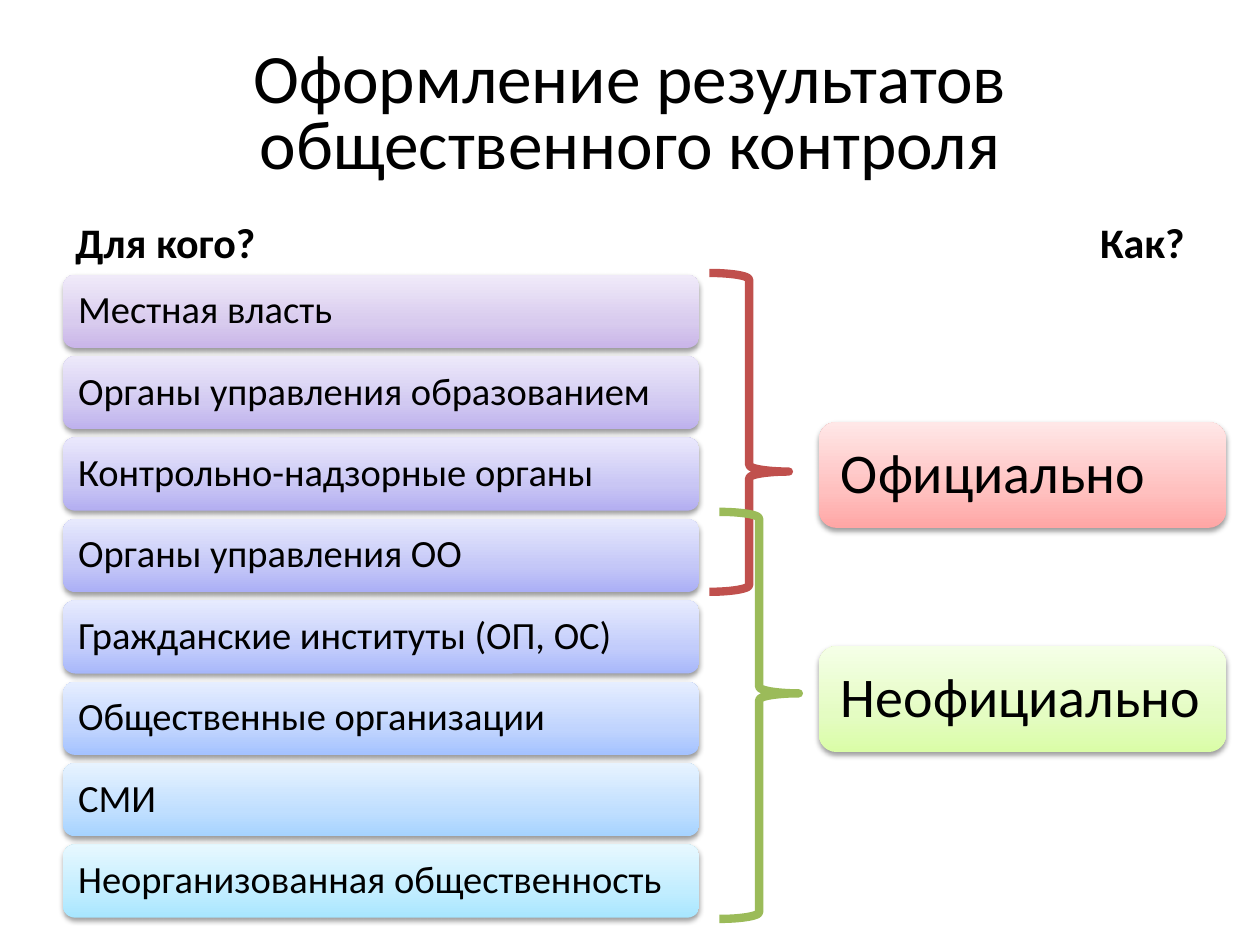
from copy import deepcopy

from lxml.etree import SubElement
from pptx import Presentation
from pptx.dml.color import RGBColor
from pptx.enum.shapes import MSO_SHAPE
from pptx.enum.text import MSO_ANCHOR, MSO_AUTO_SIZE, PP_ALIGN
from pptx.oxml.ns import qn
from pptx.util import Pt

FONT = "Calibri"
BLACK = RGBColor(0x00, 0x00, 0x00)
RED = RGBColor(0xC0, 0x50, 0x4D)
GREEN = RGBColor(0x9B, 0xBB, 0x59)

STOP_POSITIONS = (0, 0.35, 1)

# Label and gradient colours, from the bottom of the bar to its top
AUDIENCES = [
    ("Местная власть", ("C9B5E8", "D8CBEE", "F0EAF9")),
    ("Органы управления образованием", ("BEB1ED", "D1C9F1", "EDE9FA")),
    ("Контрольно-надзорные органы", ("B3AEF1", "C9C6F4", "EAE8FC")),
    ("Органы управления ОО", ("ABAFF6", "C4C7F7", "E7E9FD")),
    ("Гражданские институты (ОП, ОС)", ("A7B7FA", "C2CCFB", "E7EBFE")),
    ("Общественные организации", ("A4C2FF", "C0D4FE", "E6EEFF")),
    ("СМИ", ("A6D3FF", "C0DFFF", "E7F3FF")),
    ("Неорганизованная общественность", ("A7E6FF", "C1EDFF", "E7F8FF")),
]
MANNERS = [
    ("Официально", ("FFA6A5", "FFC0BF", "FFE7E7")),
    ("Неофициально", ("DAFDA7", "E4FCC2", "F5FFE7")),
]


def add_run(paragraph, text, size, bold=False):
    run = paragraph.add_run()
    run.text = text
    run.font.name = FONT
    run.font.size = Pt(size)
    run.font.bold = bold
    run.font.color.rgb = BLACK


def fill_gradient(shape, colours):
    """Three-stop gradient that runs from the bottom edge to the top."""
    fill = shape.fill
    fill.gradient()
    fill.gradient_angle = 90
    stop_list = shape.element.spPr.find(qn("a:gradFill")).find(qn("a:gsLst"))
    stop_list.insert(1, deepcopy(stop_list[0]))
    for stop, position, colour in zip(fill.gradient_stops, STOP_POSITIONS, colours):
        stop.position = position
        stop.color.rgb = RGBColor.from_string(colour)


def add_soft_shadow(shape):
    shape.shadow.inherit = False
    effects = shape.element.spPr.find(qn("a:effectLst"))
    shadow = SubElement(effects, qn("a:outerShdw"), blurRad=str(Pt(3.1)),
                        dist=str(Pt(1.6)), dir="5400000", rotWithShape="0")
    colour = SubElement(shadow, qn("a:srgbClr"), val="000000")
    SubElement(colour, qn("a:alpha"), val="38000")


def add_bar(slide, box, label, colours, size, inset):
    left, top, width, height = box
    bar = slide.shapes.add_shape(MSO_SHAPE.ROUNDED_RECTANGLE, Pt(left), Pt(top),
                                 Pt(width), Pt(height))
    fill_gradient(bar, colours)
    bar.line.fill.background()
    add_soft_shadow(bar)
    frame = bar.text_frame
    frame.word_wrap = True
    frame.vertical_anchor = MSO_ANCHOR.MIDDLE
    frame.margin_left = frame.margin_right = Pt(inset)
    frame.margin_top = frame.margin_bottom = Pt(0)
    paragraph = frame.paragraphs[0]
    paragraph.alignment = PP_ALIGN.LEFT
    paragraph.line_spacing = 0.9
    add_run(paragraph, label, size)


def add_bar_column(slide, box, bars, bar_height, size, inset):
    """Spread the bars evenly from the top of the box to its bottom."""
    left, top, width, height = box
    pitch = (height - bar_height) / (len(bars) - 1)
    for index, (label, colours) in enumerate(bars):
        add_bar(slide, (left, top + index * pitch, width, bar_height),
                label, colours, size, inset)


def place_title(slide, box, text):
    title = slide.shapes.title
    title.left, title.top, title.width, title.height = map(Pt, box)
    frame = title.text_frame
    frame.word_wrap = True
    frame.auto_size = MSO_AUTO_SIZE.NONE
    frame.vertical_anchor = MSO_ANCHOR.MIDDLE
    paragraph = frame.paragraphs[0]
    paragraph.alignment = PP_ALIGN.CENTER
    paragraph.line_spacing = 0.8
    add_run(paragraph, text, 39.6)


def add_heading(slide, box, text, alignment):
    heading = slide.shapes.add_textbox(*map(Pt, box))
    frame = heading.text_frame
    frame.word_wrap = True
    frame.vertical_anchor = MSO_ANCHOR.BOTTOM
    paragraph = frame.paragraphs[0]
    paragraph.alignment = alignment
    add_run(paragraph, text, 24, bold=True)


def add_brace(slide, box, colour, point):
    """Right brace whose tip sits at the given share of its height."""
    brace = slide.shapes.add_shape(MSO_SHAPE.RIGHT_BRACE, *map(Pt, box))
    brace.adjustments[0] = 0.083
    brace.adjustments[1] = point
    brace.fill.background()
    brace.line.color.rgb = colour
    brace.line.width = Pt(4.75)
    brace.shadow.inherit = False


def main():
    presentation = Presentation()
    presentation.slide_width = Pt(720)
    presentation.slide_height = Pt(540)
    slide = presentation.slides.add_slide(presentation.slide_layouts[5])

    place_title(slide, (36, 21.6, 648, 90),
                "Оформление результатов общественного контроля")
    add_heading(slide, (36, 105.8, 318.2, 50.4), "Для кого?", PP_ALIGN.LEFT)
    add_bar_column(slide, (36, 157, 363.6, 367.4), AUDIENCES, 41.8, 22, 6.6)
    add_heading(slide, (365.8, 105.8, 318.2, 50.4), "Как?", PP_ALIGN.RIGHT)
    add_bar_column(slide, (468, 241.2, 232.6, 188.6), MANNERS, 60.5, 32, 9.6)
    add_brace(slide, (405.4, 156, 45.4, 182.2), RED, 0.623)
    add_brace(slide, (411.1, 292.5, 45.4, 232.6), GREEN, 0.446)

    presentation.save("out.pptx")


if __name__ == "__main__":
    main()
